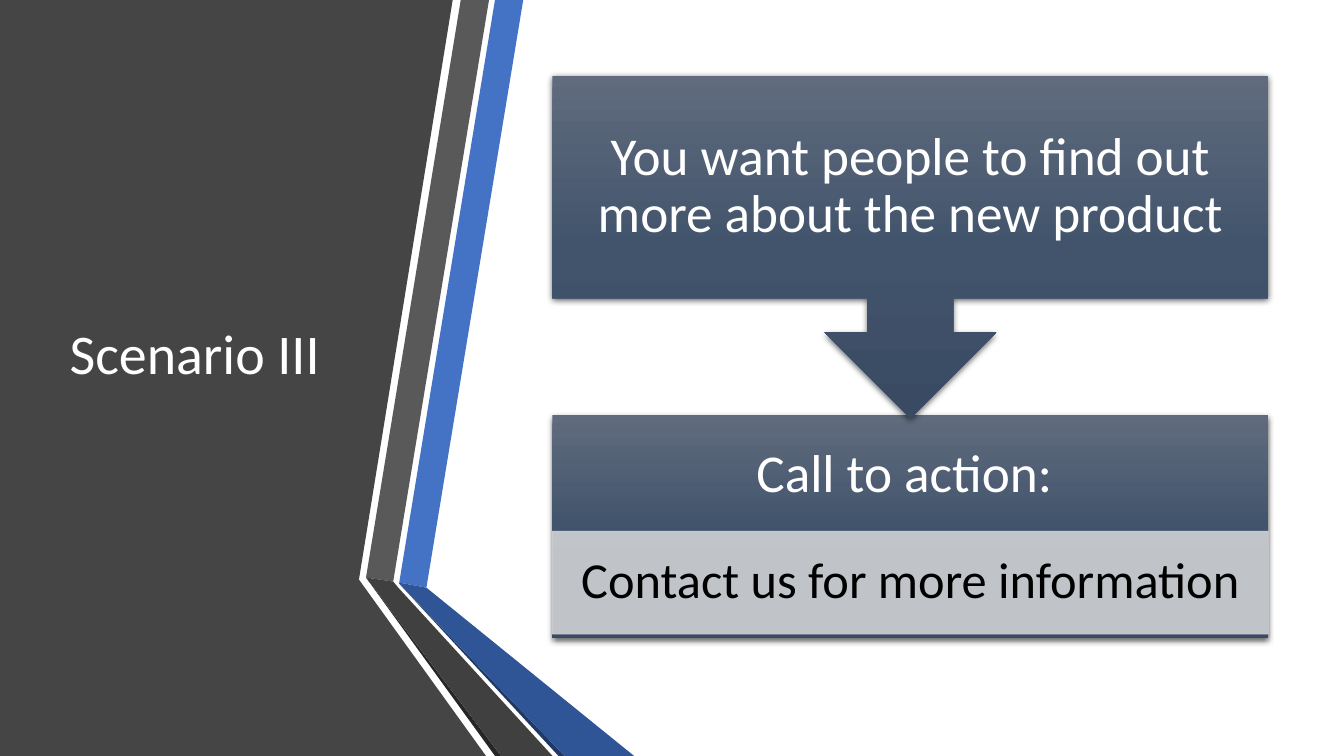
from lxml import etree
from pptx import Presentation
from pptx.dml.color import RGBColor
from pptx.enum.shapes import MSO_SHAPE
from pptx.enum.text import MSO_ANCHOR, PP_ALIGN
from pptx.oxml.ns import qn
from pptx.util import Pt

PX = 9144  # EMU in one px, 100 px to the inch
RECTANGLE, CALLOUT = MSO_SHAPE.RECTANGLE, MSO_SHAPE.DOWN_ARROW_CALLOUT
MIDDLE, LEFT, CENTER = MSO_ANCHOR.MIDDLE, PP_ALIGN.LEFT, PP_ALIGN.CENTER

WHITE = RGBColor(0xFF, 0xFF, 0xFF)
BLACK = RGBColor(0x00, 0x00, 0x00)
PANEL = RGBColor(0x45, 0x45, 0x45)
BLUE = RGBColor(0x44, 0x72, 0xC4)
DEEP_BLUE = RGBColor(0x2F, 0x55, 0x97)
NAVY = RGBColor(0x20, 0x38, 0x64)
GRAY = RGBColor(0x59, 0x59, 0x59)
DARK_GRAY = RGBColor(0x40, 0x40, 0x40)
CHARCOAL = RGBColor(0x26, 0x26, 0x26)
PALE = RGBColor(0xCF, 0xD1, 0xD4)
CARD_STOPS = [
    (0, RGBColor(0x60, 0x6B, 0x7D)),
    (50, RGBColor(0x42, 0x54, 0x6C)),
    (100, RGBColor(0x39, 0x4A, 0x62)),
]


def write_text(shape, text, size, color=WHITE, align=CENTER, insets=(10, 5, 10, 5)):
    frame = shape.text_frame
    frame.word_wrap = True
    frame.vertical_anchor = MIDDLE
    (frame.margin_left, frame.margin_top,
     frame.margin_right, frame.margin_bottom) = [inset * PX for inset in insets]
    para = frame.paragraphs[0]
    para.alignment = align
    para.line_spacing = 0.9
    span = para.add_run()
    span.text = text
    span.font.size = Pt(size)
    span.font.name = "Calibri"
    span.font.color.rgb = color


def add_card(page, preset, top, height):
    """Add a box with the slate gradient and a soft shadow below."""
    card = page.shapes.add_shape(preset, 548 * PX, top * PX, 710 * PX, height * PX)
    card.line.fill.background()
    card.fill.gradient()
    card.fill.gradient_angle = 270
    stops = card.element.spPr.find(".//" + qn("a:gsLst"))
    for stop in list(stops):
        stops.remove(stop)
    for percent, color in CARD_STOPS:
        stop = etree.SubElement(stops, qn("a:gs"), pos=str(percent * 1000))
        etree.SubElement(stop, qn("a:srgbClr"), val=str(color))
    card.shadow.inherit = False
    effects = card.element.spPr.find(qn("a:effectLst"))
    shadow = etree.SubElement(
        effects, qn("a:outerShdw"), blurRad=str(Pt(4.5)), dist=str(Pt(1.5)),
        dir="5400000", algn="ctr", rotWithShape="0")
    shade = etree.SubElement(shadow, qn("a:srgbClr"), val=str(BLACK))
    etree.SubElement(shade, qn("a:alpha"), val="63000")
    return card


deck = Presentation()
deck.slide_width, deck.slide_height = 1333 * PX, 750 * PX
page = deck.slides.add_slide(deck.slide_layouts[5])

# Dark panel and folded ribbons on the left
ribbons = [
    (PANEL, [(0, 0), (449, 0), (356, 575), (482, 750), (0, 750)]),
    (BLUE, [(396, 578), (423, 583), (519, 0), (491, 0)]),
    (GRAY, [(485, 0), (457, 0), (363, 573), (390, 577)]),
    (CHARCOAL, [(363, 573), (491, 750), (497, 750)]),
    (NAVY, [(396, 579), (554, 750), (560, 750)]),
    (DEEP_BLUE, [(396, 578), (396, 579), (560, 750), (629, 750), (423, 583)]),
    (DARK_GRAY, [(363, 573), (497, 750), (548, 750), (395, 583), (390, 577)]),
]
for color, points in ribbons:
    builder = page.shapes.build_freeform(*points[0], scale=PX)
    builder.add_line_segments(points[1:], close=True)
    ribbon = builder.convert_to_shape()
    ribbon.fill.solid()
    ribbon.fill.fore_color.rgb = color
    ribbon.line.fill.background()
    ribbon.shadow.inherit = False

# Title, raised above the panel
title = page.shapes.title
title.left, title.top, title.width, title.height = 59 * PX, 75 * PX, 304 * PX, 558 * PX
write_text(title, "Scenario III", 40, align=LEFT)
title.element.getparent().append(title.element)

# Call to action card with its pale band
action = add_card(page, RECTANGLE, top=412, height=221)
write_text(action, "Call to action: ", 38, insets=(30, 30, 30, 132))

band = page.shapes.add_shape(RECTANGLE, 548 * PX, 527 * PX, 710 * PX, 102 * PX)
band.shadow.inherit = False
band.line.width = Pt(0.5)
band.fill.solid()
band.line.fill.solid()
for paint in (band.fill, band.line.fill):
    paint.fore_color.rgb = PALE
for tint in band.element.spPr.iter(qn("a:srgbClr")):
    etree.SubElement(tint, qn("a:alpha"), val="90000")
write_text(band, "Contact us for more information", 36, color=BLACK, insets=(28, 5, 28, 5))

# Goal card pointing down to the action
goal = add_card(page, CALLOUT, top=75, height=340)
write_text(goal, "You want people to find out more about the new product", 38,
           insets=(30, 30, 30, 30))

deck.save("out.pptx")
